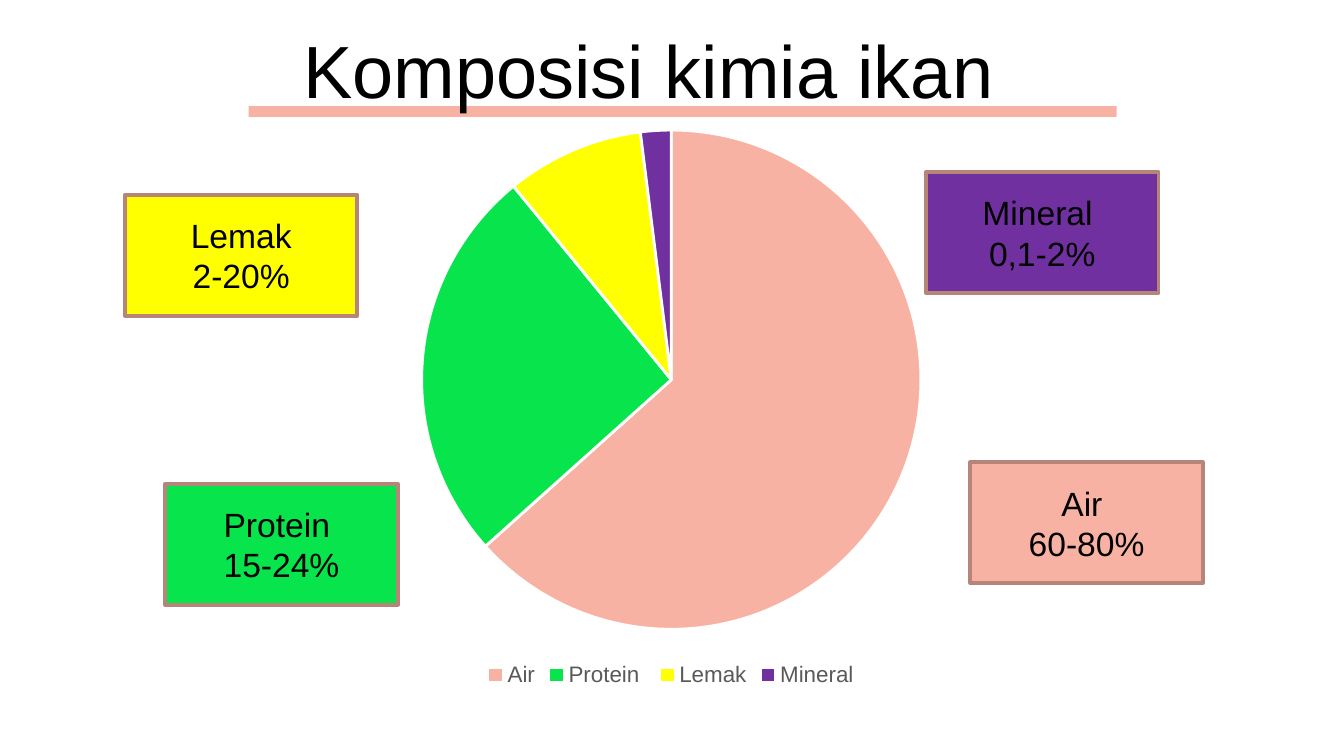
import pptx
import pptx.chart.data
import pptx.dml.color
import pptx.enum.chart
import pptx.enum.shapes
import pptx.enum.text
import pptx.util
from pptx.util import Inches

FONT = "Arial"
COLOURS = {
    "air": "F8B2A3", "protein": "08E44C", "lemak": "FFFF00", "mineral": "7030A0",
    "border": "B78479", "text": "000000", "legend": "595959", "white": "FFFFFF",
}
TITLE = "Komposisi kimia ikan"
# Chart category, value, colour key
SLICES = [
    ("Air", 64, "air"),
    ("Protein ", 26, "protein"),
    ("Lemak", 9, "lemak"),
    ("Mineral", 2, "mineral"),
]
# Label lines, colour key, left, top
LABELS = [
    (("Protein ", "15-24%"), "protein", 1.23, 3.6),
    (("Lemak", "2-20%"), "lemak", 0.93, 1.45),
    (("Mineral ", "0,1-2%"), "mineral", 6.89, 1.28),
    (("Air ", "60-80%"), "air", 7.22, 3.44),
]
LABEL_SIZE = (1.73, 0.9)


def colour(name):
    return pptx.dml.color.RGBColor.from_string(COLOURS[name])


def set_font(font, size, name="text"):
    font.name = FONT
    font.size = pptx.util.Pt(size)
    font.color.rgb = colour(name)


def add_rectangle(slide, left, top, width, height, fill):
    shape = slide.shapes.add_shape(
        pptx.enum.shapes.MSO_SHAPE.RECTANGLE,
        Inches(left), Inches(top), Inches(width), Inches(height))
    shape.shadow.inherit = False
    shape.fill.solid()
    shape.fill.fore_color.rgb = colour(fill)
    return shape


def add_title(slide):
    title = slide.shapes.title
    title.left, title.top = Inches(0.84), Inches(0.13)
    title.width, title.height = Inches(7.97), Inches(0.7)
    frame = title.text_frame
    frame.text = TITLE
    frame.word_wrap = True
    frame.auto_size = pptx.enum.text.MSO_AUTO_SIZE.NONE
    frame.vertical_anchor = pptx.enum.text.MSO_ANCHOR.TOP
    frame.margin_top = frame.margin_bottom = Inches(0.05)
    paragraph = frame.paragraphs[0]
    paragraph.alignment = pptx.enum.text.PP_ALIGN.CENTER
    paragraph.line_spacing = 1.0
    set_font(paragraph.font, 39.6)

    # Underline bar, behind the title
    bar = add_rectangle(slide, 1.85, 0.79, 6.46, 0.08, "air")
    bar.line.fill.background()
    title.element.addprevious(bar.element)


def add_pie(slide):
    data = pptx.chart.data.CategoryChartData()
    data.categories = [category for category, _, _ in SLICES]
    data.add_series("Series 1", [value for _, value, _ in SLICES])
    chart = slide.shapes.add_chart(
        pptx.enum.chart.XL_CHART_TYPE.PIE,
        Inches(2.09), Inches(0.83), Inches(5.81), Inches(4.32), data).chart
    set_font(chart.font, 10)
    chart.has_title = False
    chart.has_legend = True
    chart.legend.position = pptx.enum.chart.XL_LEGEND_POSITION.BOTTOM
    chart.legend.include_in_layout = False
    set_font(chart.legend.font, 12, "legend")
    plot = chart.plots[0]
    plot.vary_by_categories = True
    for index, (_, _, name) in enumerate(SLICES):
        point_format = plot.series[0].points[index].format
        point_format.fill.solid()
        point_format.fill.fore_color.rgb = colour(name)
        point_format.line.color.rgb = colour("white")
        point_format.line.width = pptx.util.Pt(1.5)


def add_label(slide, lines, name, left, top):
    label = add_rectangle(slide, left, top, *LABEL_SIZE, name)
    label.line.color.rgb = colour("border")
    label.line.width = pptx.util.Pt(2)
    frame = label.text_frame
    frame.text = "\n".join(lines)
    frame.word_wrap = True
    frame.vertical_anchor = pptx.enum.text.MSO_ANCHOR.MIDDLE
    for paragraph in frame.paragraphs:
        paragraph.alignment = pptx.enum.text.PP_ALIGN.CENTER
        set_font(paragraph.font, 18)


def main():
    presentation = pptx.Presentation()
    # Widescreen, 16 to 9
    presentation.slide_width = Inches(10)
    presentation.slide_height = Inches(10 * 9 / 16)
    slide = presentation.slides.add_slide(presentation.slide_layouts[5])
    slide.background.fill.solid()
    slide.background.fill.fore_color.rgb = colour("white")
    add_title(slide)
    add_pie(slide)
    for label in LABELS:
        add_label(slide, *label)
    presentation.save("out.pptx")


if __name__ == "__main__":
    main()
